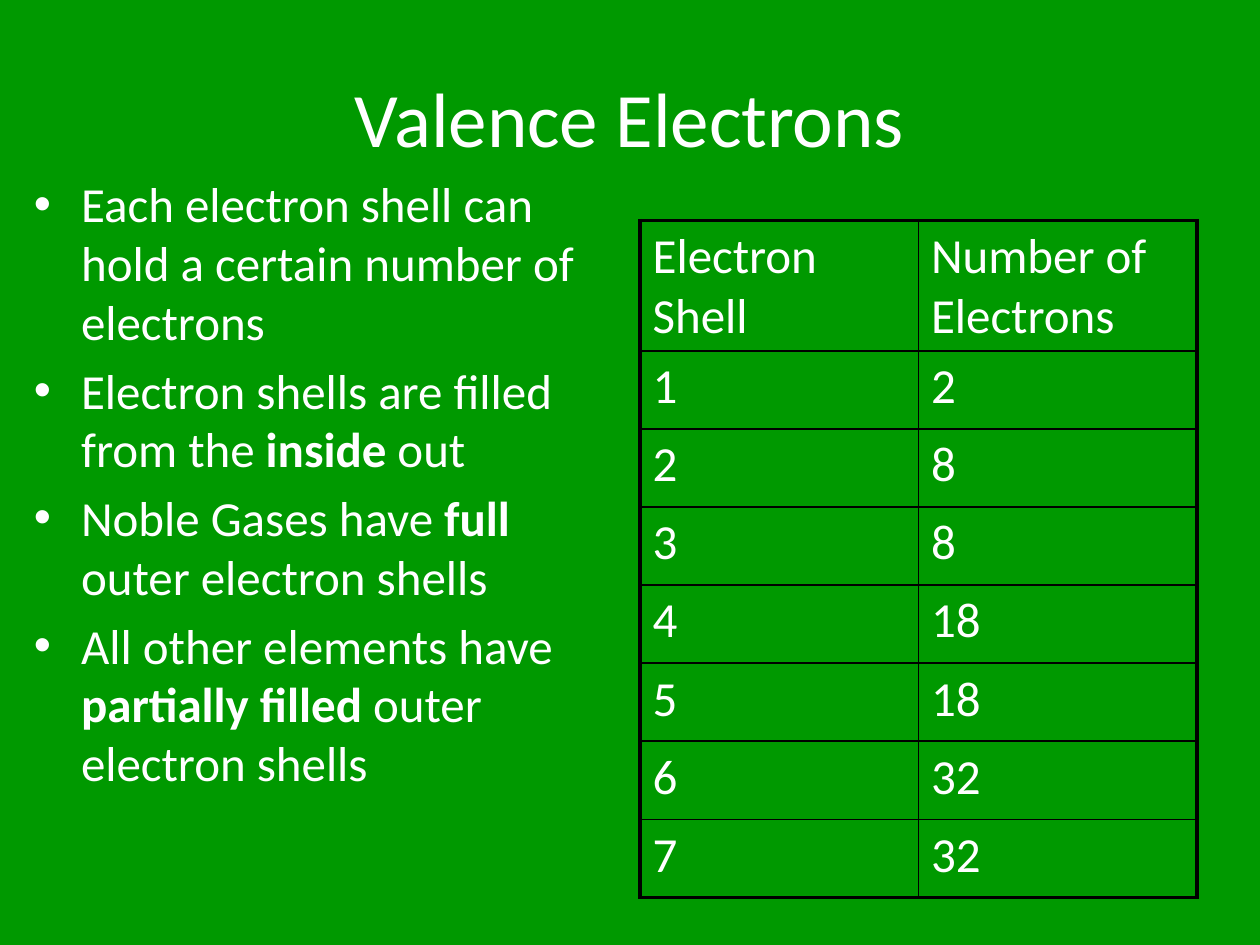
from dataclasses import dataclass

from lxml import etree
from pptx import Presentation
from pptx.dml.color import RGBColor
from pptx.enum import text
from pptx.oxml.ns import qn
from pptx.util import Pt


@dataclass(frozen=True)
class Theme:
    font: str = "Calibri"
    background: str = "009900"
    ink: str = "FFFFFF"
    border: str = "000000"
    title_size: float = 44
    body_size: float = 28
    outer_line: float = 2.25
    inner_line: float = 1
    paragraph_gap: float = 5.6
    bullet_indent: float = 27


@dataclass(frozen=True)
class Box:
    left: float
    top: float
    width: float
    height: float

    def lengths(self) -> tuple:
        return Pt(self.left), Pt(self.top), Pt(self.width), Pt(self.height)


@dataclass(frozen=True)
class Bullet:
    before: str
    bold: str = ""
    after: str = ""


THEME = Theme()
TITLE_BOX = Box(36, 21.6, 648, 90)
BULLET_BOX = Box(12.24, 95.76, 342, 398.16)
TABLE_BOX = Box(365.76, 126, 318.24, 386.64)
HEADER_HEIGHT = 74.16

BULLETS = [
    Bullet("Each electron shell can hold a certain number of electrons"),
    Bullet("Electron shells are filled from the ", "inside", " out"),
    Bullet("Noble Gases have ", "full ", "outer electron shells"),
    Bullet("All other elements have ", "partially filled", " outer electron shells"),
]
CAPACITIES = [2, 8, 8, 18, 18, 32, 32]
ROWS = [("Electron Shell", "Number of Electrons")] + [
    (str(shell), str(capacity)) for shell, capacity in enumerate(CAPACITIES, 1)
]


def format_run(run, size: float, bold: bool = False) -> None:
    run.font.name = THEME.font
    run.font.size = Pt(size)
    run.font.bold = bold
    run.font.color.rgb = RGBColor.from_string(THEME.ink)


def add_title(slide, title: str) -> None:
    shape = slide.shapes.title
    shape.left, shape.top, shape.width, shape.height = TITLE_BOX.lengths()
    frame = shape.text_frame
    frame.text = title
    frame.vertical_anchor = text.MSO_ANCHOR.MIDDLE
    paragraph = frame.paragraphs[0]
    paragraph.alignment = text.PP_ALIGN.CENTER
    format_run(paragraph.runs[0], THEME.title_size)


def add_bullet(paragraph, bullet: Bullet) -> None:
    paragraph.space_before = Pt(THEME.paragraph_gap)
    properties = paragraph._p.get_or_add_pPr()
    properties.set("marL", str(Pt(THEME.bullet_indent)))
    properties.set("indent", str(-Pt(THEME.bullet_indent)))
    etree.SubElement(properties, qn("a:buFont"), typeface="Arial")
    etree.SubElement(properties, qn("a:buChar"), char="•")
    for words in filter(None, (bullet.before, bullet.bold, bullet.after)):
        run = paragraph.add_run()
        run.text = words
        format_run(run, THEME.body_size, words == bullet.bold)


def add_bullets(slide, bullets: list[Bullet]) -> None:
    frame = slide.shapes.add_textbox(*BULLET_BOX.lengths()).text_frame
    frame.word_wrap = True
    for index, bullet in enumerate(bullets):
        paragraph = frame.add_paragraph() if index else frame.paragraphs[0]
        add_bullet(paragraph, bullet)


def set_border(cell, side: str, outer: bool) -> None:
    width = THEME.outer_line if outer else THEME.inner_line
    line = etree.SubElement(
        cell._tc.get_or_add_tcPr(), qn(f"a:{side}"), w=str(Pt(width))
    )
    fill = etree.SubElement(line, qn("a:solidFill"))
    etree.SubElement(fill, qn("a:srgbClr"), val=THEME.border)


def add_shell_table(slide, rows: list[tuple[str, str]]) -> None:
    last_row, last_column = len(rows) - 1, len(rows[0]) - 1
    table = slide.shapes.add_table(
        len(rows), len(rows[0]), *TABLE_BOX.lengths()
    ).table
    table.first_row = table.horz_banding = False
    row_height = (TABLE_BOX.height - HEADER_HEIGHT) / last_row
    for row, values in enumerate(rows):
        table.rows[row].height = Pt(row_height if row else HEADER_HEIGHT)
        for column, value in enumerate(values):
            cell = table.cell(row, column)
            cell.text_frame.text = value
            format_run(cell.text_frame.paragraphs[0].runs[0], THEME.body_size)
            set_border(cell, "lnL", column == 0)
            set_border(cell, "lnR", column == last_column)
            set_border(cell, "lnT", row == 0)
            set_border(cell, "lnB", row == last_row)
            cell.fill.background()


def main() -> None:
    presentation = Presentation()
    presentation.slide_width, presentation.slide_height = Pt(720), Pt(540)
    slide = presentation.slides.add_slide(presentation.slide_layouts[5])
    slide.background.fill.solid()
    slide.background.fill.fore_color.rgb = RGBColor.from_string(THEME.background)
    add_title(slide, "Valence Electrons")
    add_bullets(slide, BULLETS)
    add_shell_table(slide, ROWS)
    presentation.save("out.pptx")


if __name__ == "__main__":
    main()
